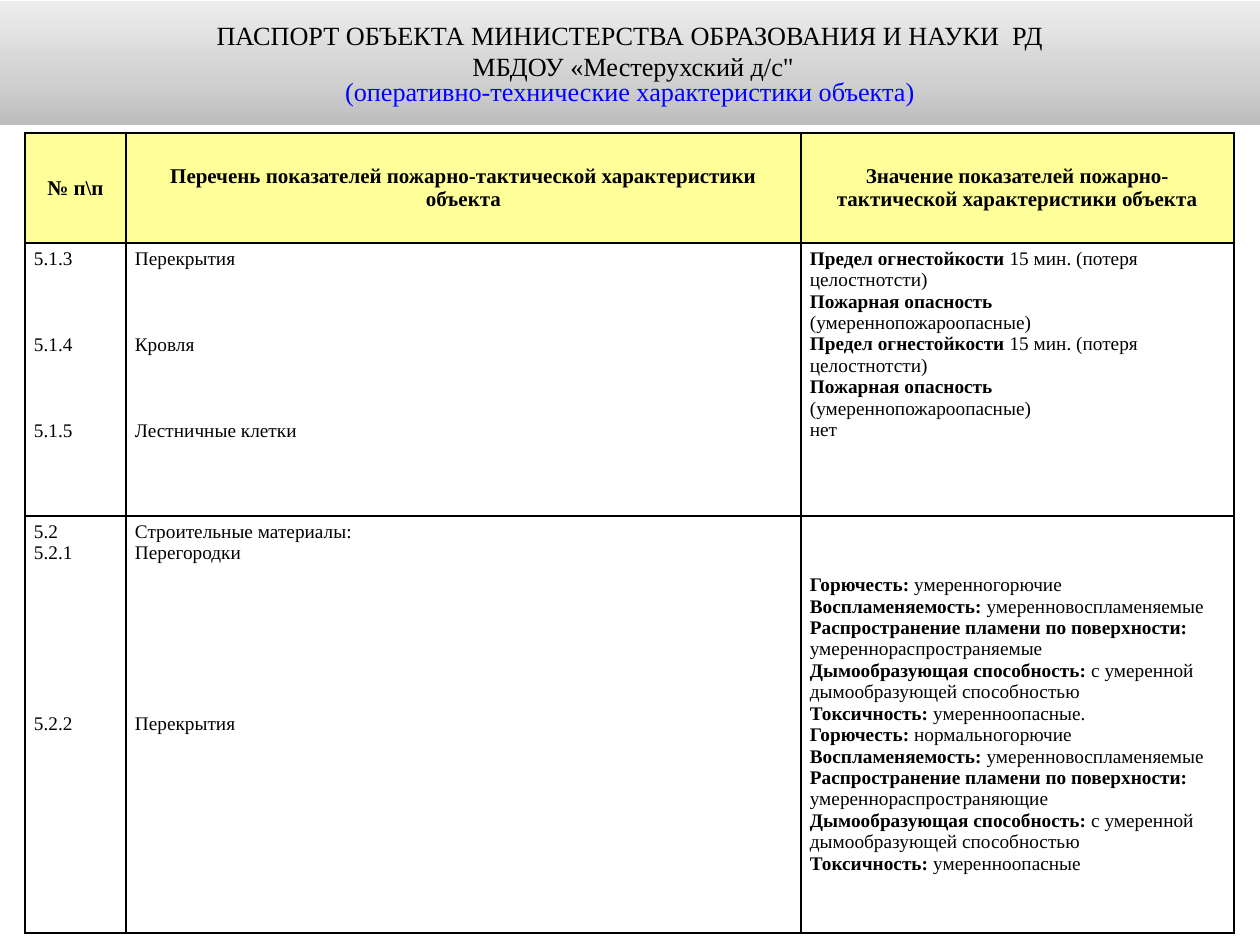
import copy

import pptx
import pptx.dml.color
import pptx.enum.shapes
import pptx.enum.text
import pptx.oxml
import pptx.oxml.ns
import pptx.util

PX = 914400 // 126
RGB = pptx.dml.color.RGBColor
BLACK = RGB(0x00, 0x00, 0x00)
WHITE = RGB(0xFF, 0xFF, 0xFF)
BLUE = RGB(0x00, 0x00, 0xFF)
YELLOW = RGB(0xFF, 0xFF, 0x99)
BANNER_STOPS = [(0, RGB(0xBC, 0xBC, 0xBC)), (0.35, RGB(0xD0, 0xD0, 0xD0)),
                (1, RGB(0xED, 0xED, 0xED))]
FONT = "Times New Roman"
CENTER = pptx.enum.text.PP_ALIGN.CENTER
MIDDLE = pptx.enum.text.MSO_ANCHOR.MIDDLE
TOP = pptx.enum.text.MSO_ANCHOR.TOP

COLUMNS = [101, 675, 433]
ROWS = [110, 273, 417]
HEADERS = ["№ п\\п",
           "Перечень показателей пожарно-тактической характеристики объекта",
           "Значение показателей пожарно-тактической характеристики объекта"]

# Each entry: gap above in px, number, indicator
STRUCTURES = [(0, "5.1.3", "Перекрытия"), (65, "5.1.4", "Кровля"),
              (65, "5.1.5", "Лестничные клетки")]
MATERIALS = [(0, "5.2", "Строительные материалы:"), (0, "5.2.1", "Перегородки"),
             (150, "5.2.2", "Перекрытия")]

# Each entry: bold label, plain value
FIRE_LIMIT = [("Предел огнестойкости ", "15 мин. (потеря целостнотсти)"),
              ("Пожарная опасность", ""), ("", "(умереннопожароопасные)")]


def material_values(burning, spreading, toxicity):
    return [("Горючесть:", " " + burning),
            ("Воспламеняемость: ", "умеренновоспламеняемые"),
            ("Распространение пламени по поверхности:", ""),
            ("", spreading),
            ("Дымообразующая способность: ",
             "с умеренной дымообразующей способностью"),
            ("Токсичность:", " " + toxicity)]


STRUCTURE_VALUES = FIRE_LIMIT * 2 + [("", "нет")]
MATERIAL_VALUES = (
    material_values("нормальногорючие".replace("нормально", "умеренно"),
                    "умереннораспространяемые", "умеренноопасные.")
    + material_values("нормальногорючие", "умереннораспространяющие",
                      "умеренноопасные"))


def px(length):
    return pptx.util.Emu(length * PX)


def style(para, size, color=BLACK, bold=False):
    para.font.name = FONT
    para.font.size = pptx.util.Pt(size)
    para.font.color.rgb = color
    para.font.bold = bold


def next_para(frame, index):
    return frame.paragraphs[0] if index == 0 else frame.add_paragraph()


def add_banner(page, left, top, width, height):
    banner = page.shapes.add_shape(pptx.enum.shapes.MSO_SHAPE.RECTANGLE,
                                   px(left), px(top), px(width), px(height))
    banner.shadow.inherit = False
    banner.line.fill.background()

    # Gradient from dark at the bottom to light at the top
    banner.fill.gradient()
    banner.fill.gradient_angle = 90
    stop_list = banner._element.spPr.find(".//" + pptx.oxml.ns.qn("a:gsLst"))
    stop_list.insert(1, copy.deepcopy(stop_list[0]))
    for stop, (position, color) in zip(banner.fill.gradient_stops, BANNER_STOPS):
        stop.position = position
        stop.color.rgb = color

    frame = banner.text_frame
    frame.word_wrap = True
    frame.vertical_anchor = MIDDLE
    lines = [("ПАСПОРТ ОБЪЕКТА МИНИСТЕРСТВА ОБРАЗОВАНИЯ И НАУКИ  РД\v"
              " МБДОУ «Местерухский д/с\"", BLACK, 1.0),
             ("(оперативно-технические характеристики объекта)", BLUE, 0.8)]
    for index, (text, color, spacing) in enumerate(lines):
        para = next_para(frame, index)
        para.text = text
        para.alignment = CENTER
        para.line_spacing = spacing
        style(para, 15, color)


def format_cell(cell, fill, anchor):
    cell.margin_left = cell.margin_right = px(9)
    cell.margin_top = cell.margin_bottom = px(5)
    cell.vertical_anchor = anchor
    properties = cell._tc.get_or_add_tcPr()
    for side in ("lnL", "lnR", "lnT", "lnB"):
        properties.append(pptx.oxml.parse_xml(
            f'<a:{side} {pptx.oxml.ns.nsdecls("a")} w="12700"><a:solidFill>'
            f'<a:srgbClr val="{BLACK}"/></a:solidFill></a:{side}>'))
    cell.fill.solid()
    cell.fill.fore_color.rgb = fill


def write_items(cell, items):
    for index, (gap, text) in enumerate(items):
        para = next_para(cell.text_frame, index)
        para.text = text
        para.space_before = px(gap)
        style(para, 11)


def write_values(cell, values):
    for index, (label, value) in enumerate(values):
        para = next_para(cell.text_frame, index)
        style(para, 11)
        for text, bold in ((label, True), (value, False)):
            if text:
                span = para.add_run()
                span.text = text
                span.font.bold = bold


def add_indicator_table(page, left, top):
    table = page.shapes.add_table(len(ROWS), len(COLUMNS), px(left), px(top),
                                  px(sum(COLUMNS)), px(sum(ROWS))).table
    table.first_row = table.horz_banding = False
    for column, width in zip(table.columns, COLUMNS):
        column.width = px(width)
    for row, height in zip(table.rows, ROWS):
        row.height = px(height)

    # Header row
    for cell, text in zip(table.rows[0].cells, HEADERS):
        format_cell(cell, YELLOW, MIDDLE)
        para = cell.text_frame.paragraphs[0]
        para.text = text
        para.alignment = CENTER
        style(para, 12, bold=True)

    # Body rows
    body = [(STRUCTURES, STRUCTURE_VALUES, TOP),
            (MATERIALS, MATERIAL_VALUES, MIDDLE)]
    for row_index, (entries, values, value_anchor) in enumerate(body, start=1):
        number, indicator, value = table.rows[row_index].cells
        for cell, anchor in ((number, TOP), (indicator, TOP),
                             (value, value_anchor)):
            format_cell(cell, WHITE, anchor)
        write_items(number, [(gap, code) for gap, code, _ in entries])
        write_items(indicator, [(gap, name) for gap, _, name in entries])
        write_values(value, values)


def main():
    deck = pptx.Presentation()
    deck.slide_width = px(1260)
    deck.slide_height = px(945)
    page = deck.slides.add_slide(deck.slide_layouts[6])
    add_indicator_table(page, 25, 133)
    add_banner(page, 0, 1, 1260, 124)
    deck.save("out.pptx")


if __name__ == "__main__":
    main()
